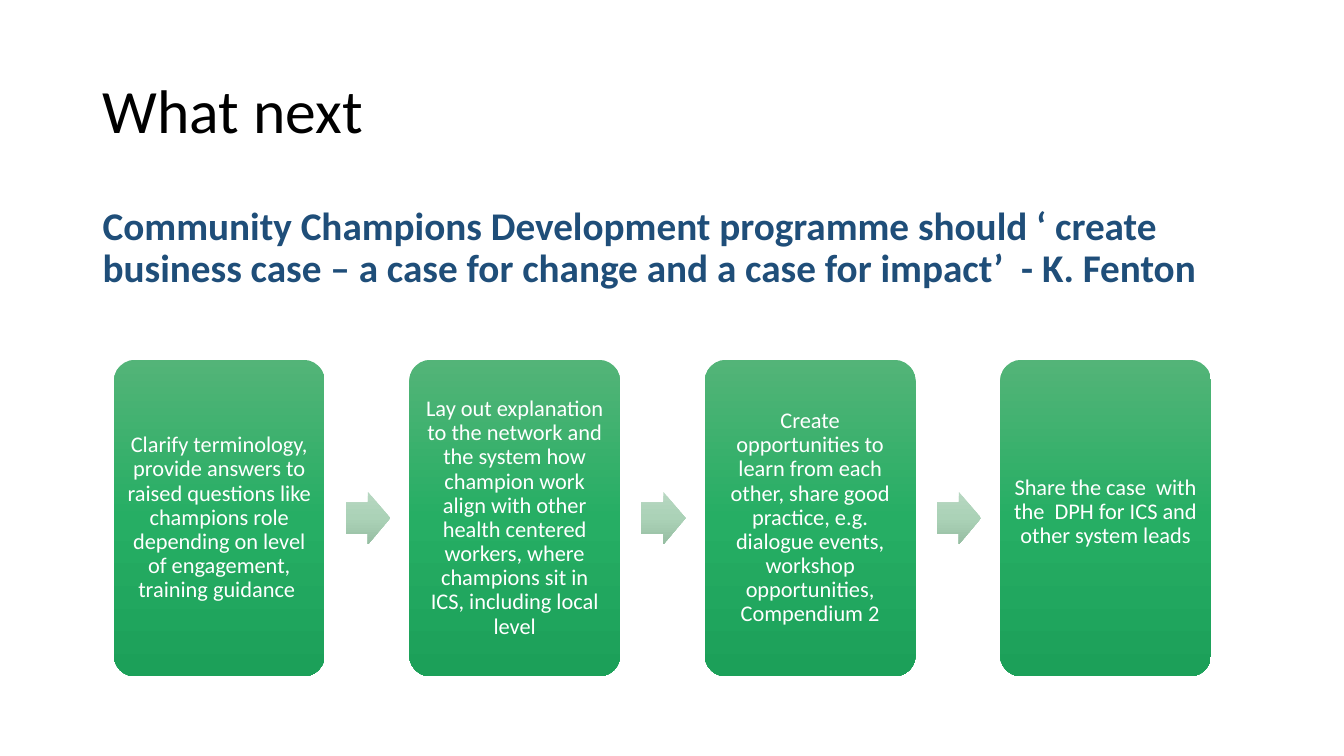
from copy import deepcopy
from dataclasses import dataclass

from pptx import Presentation
from pptx.dml.color import RGBColor
from pptx.enum.shapes import MSO_SHAPE
from pptx.enum.text import MSO_ANCHOR, PP_ALIGN
from pptx.shapes.autoshape import Shape
from pptx.slide import Slide
from pptx.text.text import TextFrame
from pptx.util import Inches, Pt

FONT = "Calibri"
BLACK = RGBColor(0x00, 0x00, 0x00)
NAVY = RGBColor(0x1F, 0x4E, 0x79)
WHITE = RGBColor(0xFF, 0xFF, 0xFF)
CARD_GREENS = (
    RGBColor(0x53, 0xB4, 0x78),
    RGBColor(0x26, 0xAE, 0x64),
    RGBColor(0x1C, 0xA0, 0x59),
)
ARROW_GREENS = (
    RGBColor(0xB7, 0xD7, 0xC1),
    RGBColor(0xAB, 0xD2, 0xB7),
    RGBColor(0x96, 0xBD, 0xA2),
)

CARD_LEFT, CARD_TOP, CARD_WIDTH, CARD_HEIGHT = 1.13, 3.57, 2.09, 3.14
CARD_PITCH = 2.93
ARROW_OFFSET, ARROW_WIDTH, ARROW_HEIGHT = 2.3, 0.44, 0.52


@dataclass(frozen=True)
class Step:
    text: str
    margin: float = 0.07
    raise_by: float = 0.0


STEPS = (
    Step(
        "Clarify terminology, provide answers to raised questions like champions "
        "role depending on level of engagement, training guidance ",
        margin=0.05,
    ),
    Step(
        "Lay out explanation to the network and the system how champion work align "
        "with other health centered workers, where champions sit in ICS, "
        "including local level"
    ),
    Step(
        "Create opportunities to learn from each other, share good practice, e.g. "
        "dialogue events, workshop opportunities, Compendium 2"
    ),
    Step(
        "Share the case  with the  DPH for ICS and other system leads",
        margin=0.06,
        raise_by=0.06,
    ),
)


def write_text(
    frame: TextFrame,
    text: str,
    size: float,
    color: RGBColor,
    bold: bool = False,
    align: PP_ALIGN = PP_ALIGN.LEFT,
    anchor: MSO_ANCHOR = MSO_ANCHOR.MIDDLE,
) -> None:
    frame.word_wrap = True
    frame.vertical_anchor = anchor
    paragraph = frame.paragraphs[0]
    paragraph.alignment = align
    paragraph.line_spacing = 0.9
    run = paragraph.add_run()
    run.text = text
    run.font.name = FONT
    run.font.size = Pt(size)
    run.font.bold = bold
    run.font.color.rgb = color


def fill_downward(shape: Shape, colors: tuple[RGBColor, ...]) -> None:
    """Fill with evenly spaced gradient stops running from top to bottom."""
    shape.fill.gradient()
    shape.fill.gradient_angle = 270
    first_stop = shape.fill.gradient_stops[0]._gs
    for _ in colors[2:]:
        first_stop.addnext(deepcopy(first_stop))
    for index, (stop, color) in enumerate(zip(shape.fill.gradient_stops, colors)):
        stop.position = index / (len(colors) - 1)
        stop.color.rgb = color


def add_gradient_shape(
    slide: Slide,
    kind: MSO_SHAPE,
    left: float,
    top: float,
    width: float,
    height: float,
    colors: tuple[RGBColor, ...],
) -> Shape:
    shape = slide.shapes.add_shape(
        kind, Inches(left), Inches(top), Inches(width), Inches(height)
    )
    shape.shadow.inherit = False
    shape.line.fill.background()
    fill_downward(shape, colors)
    return shape


def add_card(slide: Slide, step: Step, left: float) -> None:
    card = add_gradient_shape(
        slide, MSO_SHAPE.ROUNDED_RECTANGLE,
        left, CARD_TOP, CARD_WIDTH, CARD_HEIGHT, CARD_GREENS,
    )
    card.adjustments[0] = 0.1
    frame = card.text_frame
    frame.margin_left = frame.margin_right = frame.margin_top = Inches(step.margin)
    frame.margin_bottom = Inches(step.margin + 2 * step.raise_by)
    write_text(frame, step.text, 16, WHITE, align=PP_ALIGN.CENTER)


def add_arrow(slide: Slide, left: float) -> None:
    top = CARD_TOP + (CARD_HEIGHT - ARROW_HEIGHT) / 2
    arrow = add_gradient_shape(
        slide, MSO_SHAPE.RIGHT_ARROW,
        left, top, ARROW_WIDTH, ARROW_HEIGHT, ARROW_GREENS,
    )
    arrow.adjustments[0] = 0.6
    arrow.adjustments[1] = 0.5


def main() -> None:
    presentation = Presentation()
    presentation.slide_width = Inches(13.33)
    presentation.slide_height = Inches(7.5)
    slide = presentation.slides.add_slide(presentation.slide_layouts[6])

    title = slide.shapes.add_textbox(
        Inches(0.92), Inches(0.4), Inches(11.5), Inches(1.45)
    )
    write_text(title.text_frame, "What next", 44, BLACK)

    statement = slide.shapes.add_textbox(
        Inches(0.92), Inches(2), Inches(11.5), Inches(4.76)
    )
    write_text(
        statement.text_frame,
        "Community Champions Development programme should ‘ create business case "
        "– a case for change and a case for impact’  - K. Fenton",
        28, NAVY, bold=True, anchor=MSO_ANCHOR.TOP,
    )

    for index, step in enumerate(STEPS):
        left = CARD_LEFT + index * CARD_PITCH
        add_card(slide, step, left)
        if index < len(STEPS) - 1:
            add_arrow(slide, left + ARROW_OFFSET)

    presentation.save("out.pptx")


if __name__ == "__main__":
    main()
